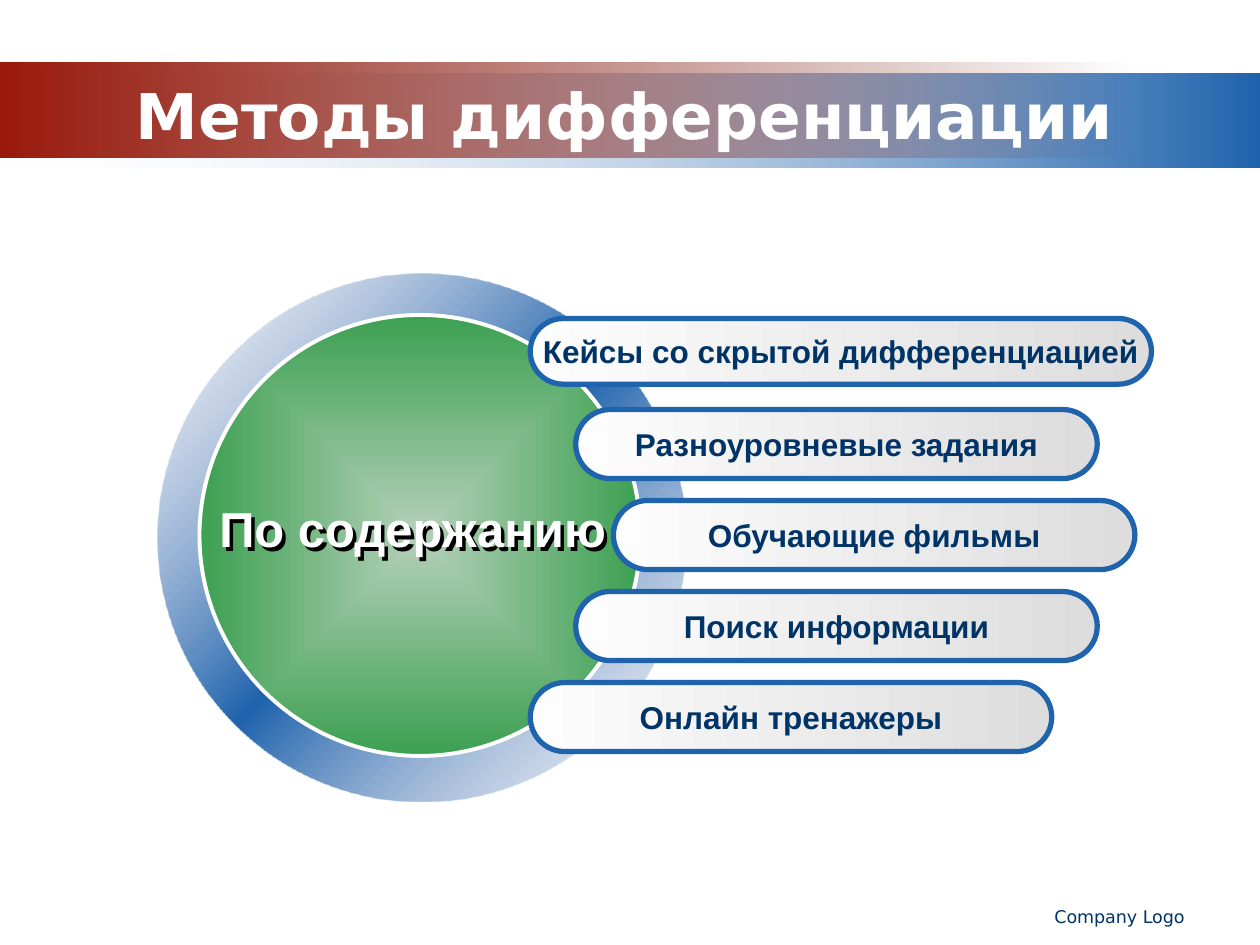
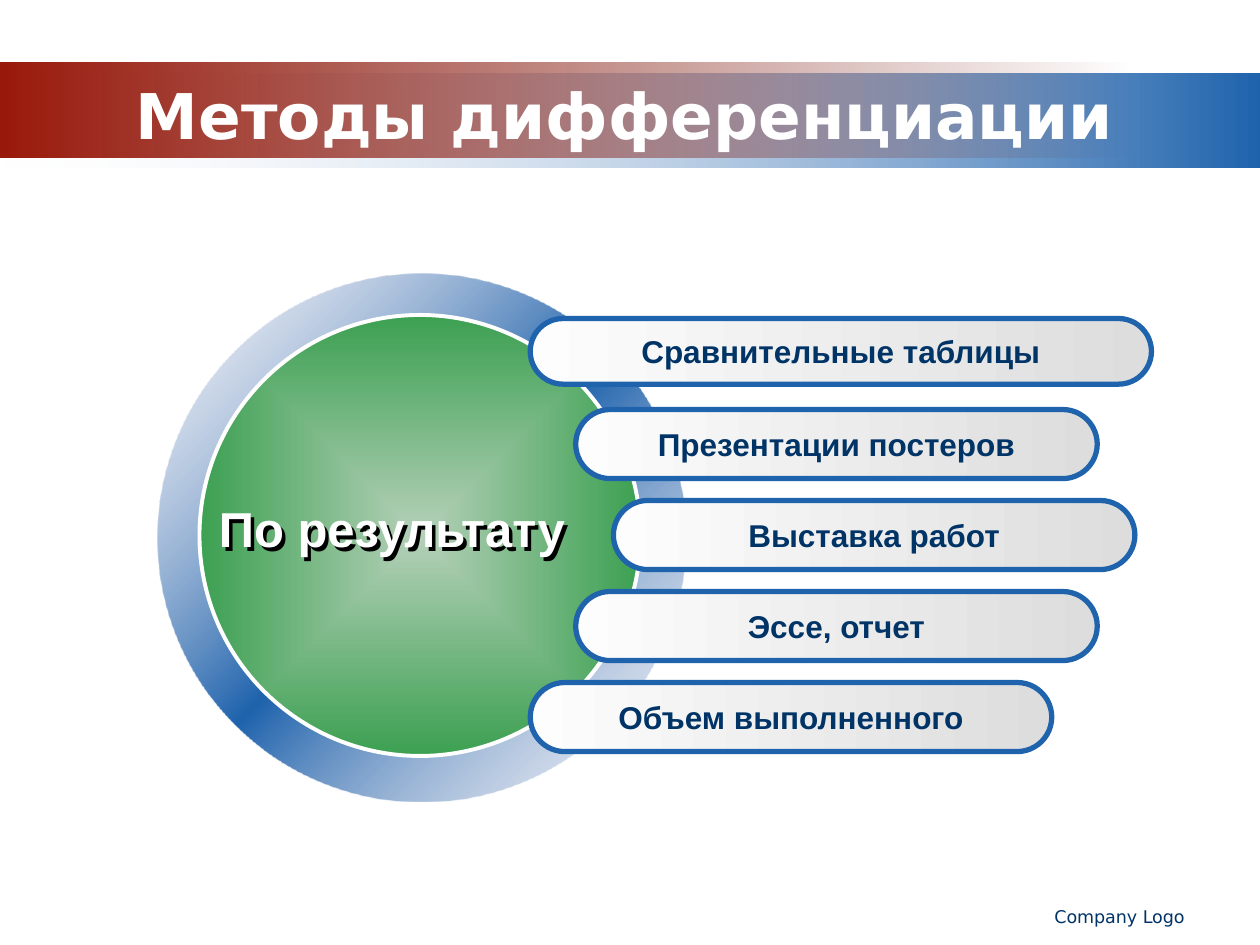
from dataclasses import dataclass

from pptx import Presentation
from pptx.dml.color import RGBColor
from pptx.enum.shapes import MSO_SHAPE
from pptx.enum.text import MSO_ANCHOR, PP_ALIGN
from pptx.oxml import parse_xml
from pptx.oxml.ns import nsdecls, qn
from pptx.util import Pt


@dataclass(frozen=True)
class Theme:
    white: str = "FFFFFF"
    navy: str = "003366"
    blue: str = "1F63AD"
    shadow: str = "000000"
    # Gradient stops: position %, colour, opacity %
    blue_band: tuple = ((0, "F1F2F7", 0), (100, "1F63AD", 100))
    red_band: tuple = ((0, "99190B", 100), (100, "6D1208", 0))
    ring: tuple = ((0, "ABB6D2", 12), (50, "1F63AD", 100), (100, "ABB6D2", 12))
    disc: tuple = ((0, "B5D0B9", 100), (100, "3CA051", 100))
    pill: tuple = ((0, "FDFDFD", 100), (100, "DDDDDD", 100))
    heading_font: str = "DejaVu Sans"
    body_font: str = "Arial"
    title_size: int = 36
    centre_size: int = 28
    pill_size: int = 18
    footer_size: int = 10


TITLE = "Методы дифференциации"
FOOTER = "Company Logo"
METHODS = [
    ("По содержанию", 238.3, [
        "Кейсы со скрытой дифференциацией", "Разноуровневые задания",
        "Обучающие фильмы", "Поиск информации", "Онлайн тренажеры"]),
    ("По результату", 214.6, [
        "Сравнительные таблицы", "Презентации постеров",
        "Выставка работ", "Эссе, отчет", "Объем выполненного"]),
]

# Pills follow the curve of the disc; the first one is wider and flatter
PILL_LEFTS = (303, 329, 350.5, 329, 303)
PILL_SIZES = ((355, 37.5),) + ((298, 39.5),) * 4
PILL_TOP, PILL_STEP = 182, 52


class Deck:
    def __init__(self, theme):
        self.theme = theme
        self.presentation = Presentation()
        self.presentation.slide_width = Pt(720)
        self.presentation.slide_height = Pt(540)
        self.slide = None

    def add_slide(self):
        self.slide = self.presentation.slides.add_slide(
            self.presentation.slide_layouts[6])
        # Header bands, title and footer
        self.gradient_shape(MSO_SHAPE.RECTANGLE, (0, 42, 720, 54), self.theme.blue_band)
        self.gradient_shape(MSO_SHAPE.RECTANGLE, (0, 36, 648, 54), self.theme.red_band)
        self.label(FOOTER, (456, 514, 228, 21.6), self.theme.footer_size,
                   align=PP_ALIGN.RIGHT, anchor=MSO_ANCHOR.TOP)
        self.label(TITLE, (66, 43, 582, 45), self.theme.title_size,
                   self.theme.white, bold=True)

    def gradient_shape(self, preset, box, stops, angle=0, radial=False,
                       line=None, line_width=0, adjust=None):
        shape = self.slide.shapes.add_shape(preset, *map(Pt, box))
        shape.shadow.inherit = False
        if adjust is not None:
            shape.adjustments[0] = adjust
        if line:
            shape.line.color.rgb = RGBColor.from_string(line)
            shape.line.width = Pt(line_width)
        else:
            shape.line.fill.background()
        # Gradient with opacity per stop
        stop_xml = "".join(
            f'<a:gs pos="{pos * 1000}"><a:srgbClr val="{colour}">'
            f'<a:alpha val="{opacity * 1000}"/></a:srgbClr></a:gs>'
            for pos, colour, opacity in stops)
        direction = (
            '<a:path path="shape"><a:fillToRect l="50000" t="50000" r="50000" b="50000"/></a:path>'
            if radial else f'<a:lin ang="{angle * 60000}" scaled="1"/>')
        shape.fill.background()
        properties = shape.element.spPr
        properties.replace(properties.find(qn("a:noFill")), parse_xml(
            f'<a:gradFill {nsdecls("a")} rotWithShape="1">'
            f'<a:gsLst>{stop_xml}</a:gsLst>{direction}</a:gradFill>'))
        return shape

    def set_text(self, shape, text, size, colour, font, bold, align, anchor, wrap):
        frame = shape.text_frame
        frame.text = text
        frame.word_wrap = wrap
        frame.vertical_anchor = anchor
        paragraph = frame.paragraphs[0]
        paragraph.alignment = align
        style = paragraph.runs[0].font
        style.name, style.size, style.bold = font, Pt(size), bold
        style.color.rgb = RGBColor.from_string(colour)

    def label(self, text, box, size, colour=None, font=None, bold=False,
              align=PP_ALIGN.CENTER, anchor=MSO_ANCHOR.MIDDLE, wrap=True):
        area = self.slide.shapes.add_textbox(*map(Pt, box))
        self.set_text(area, text, size, colour or self.theme.navy,
                      font or self.theme.heading_font, bold, align, anchor, wrap)
        return area

    def disc(self):
        self.gradient_shape(MSO_SHAPE.DONUT, (90, 156.5, 301.5, 301.5),
                            self.theme.ring, angle=45, adjust=0.09)
        self.gradient_shape(MSO_SHAPE.OVAL, (114, 180, 252, 252), self.theme.disc,
                            radial=True, line=self.theme.white, line_width=2.25)

    def pill(self, text, box):
        pill = self.gradient_shape(MSO_SHAPE.ROUNDED_RECTANGLE, box, self.theme.pill,
                                   line=self.theme.blue, line_width=3, adjust=0.5)
        self.set_text(pill, text, self.theme.pill_size, self.theme.navy, self.theme.body_font,
                      True, PP_ALIGN.CENTER, MSO_ANCHOR.MIDDLE, False)

    def centre_caption(self, text, width):
        caption = self.label(text, (116.6, 281.5, width, 41), self.theme.centre_size,
                             self.theme.white, self.theme.body_font, bold=True,
                             anchor=MSO_ANCHOR.TOP, wrap=False)
        # Hard drop shadow behind the letters
        caption.shadow.inherit = False
        caption.element.spPr.find(qn("a:effectLst")).append(parse_xml(
            f'<a:outerShdw {nsdecls("a")} dist="{Pt(2.83)}" dir="2700000" algn="ctr">'
            f'<a:srgbClr val="{self.theme.shadow}"/></a:outerShdw>'))


def main():
    deck = Deck(Theme())
    for approach, caption_width, methods in METHODS:
        deck.add_slide()
        deck.disc()
        for row, (method, left, size) in enumerate(zip(methods, PILL_LEFTS, PILL_SIZES)):
            deck.pill(method, (left, PILL_TOP + row * PILL_STEP, *size))
        deck.centre_caption(approach, caption_width)
    deck.presentation.save("out.pptx")


if __name__ == "__main__":
    main()
